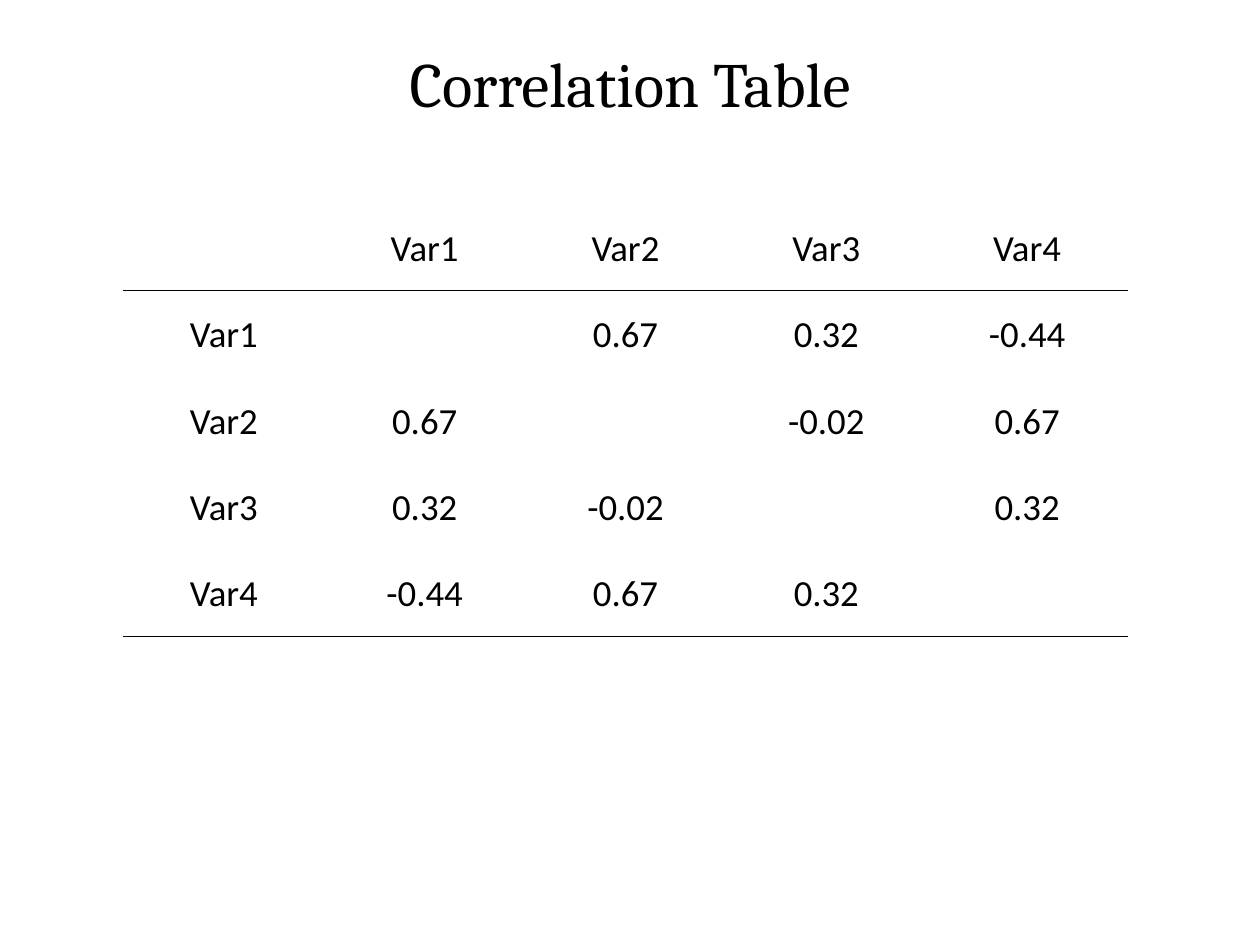
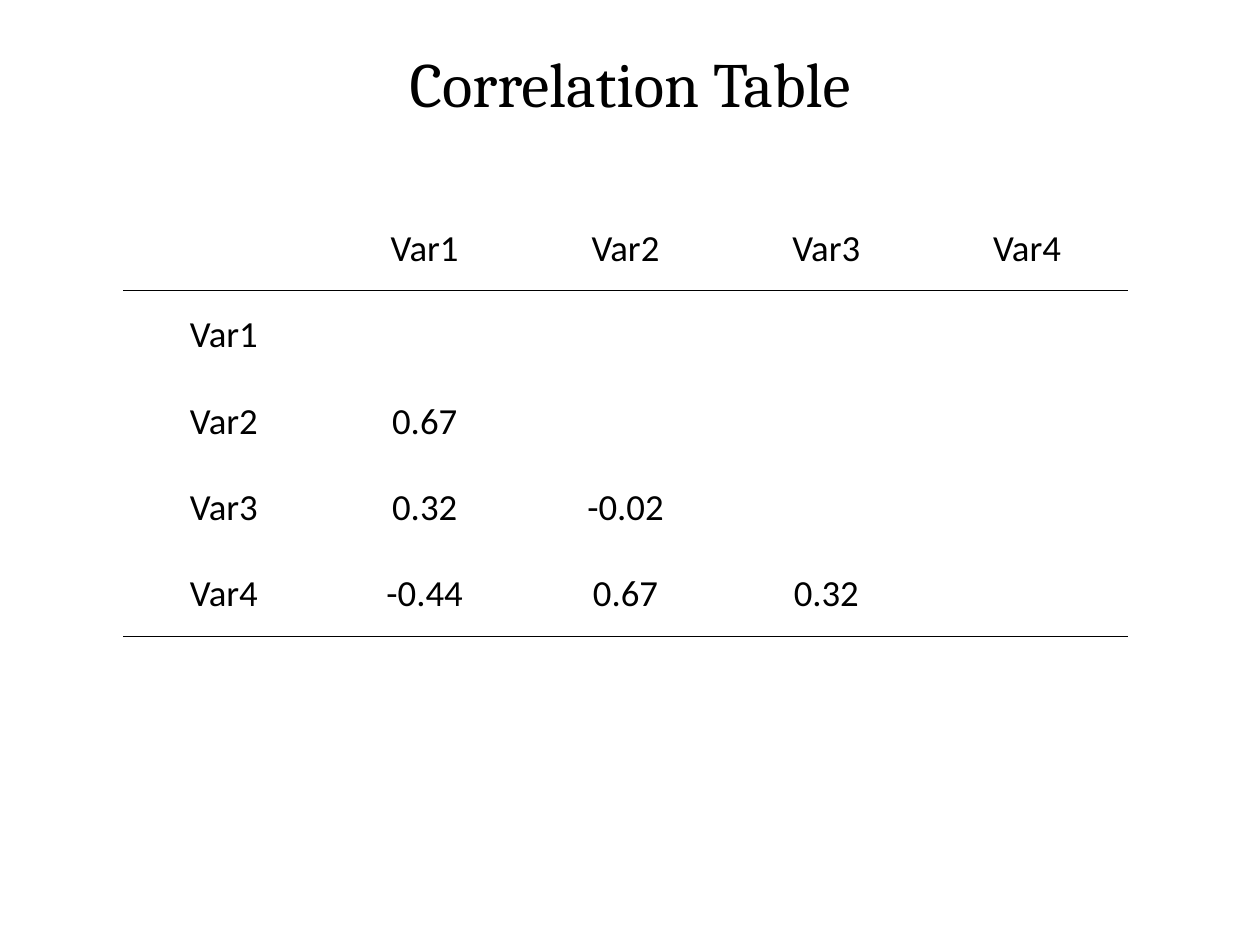
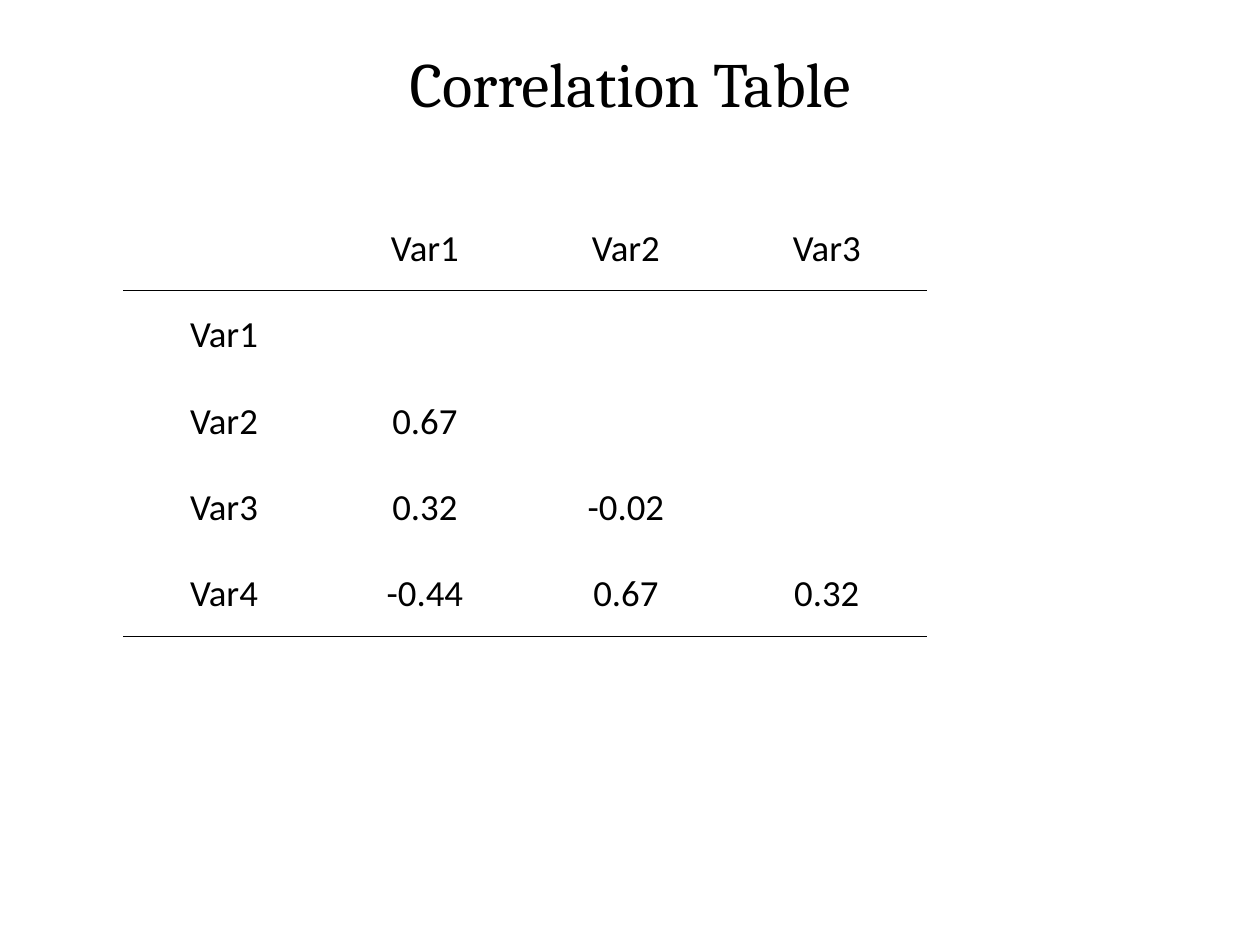
from pptx import Presentation
from pptx.dml.color import RGBColor
from pptx.enum.text import MSO_ANCHOR, PP_ALIGN
from pptx.oxml.ns import qn
from pptx.util import Inches, Pt
from lxml import etree

CENTER = PP_ALIGN.CENTER
TOP, MIDDLE = MSO_ANCHOR.TOP, MSO_ANCHOR.MIDDLE
TITLE_ONLY = 5

COLORS = {"text": "000000", "rule": "000000", "background": "FFFFFF"}
TITLE_FONT, BODY_FONT = "Cambria", "Calibri"
RULE_WIDTH = Pt(0.5)

TITLE_BOX = (0.5, 0.3, 9, 1.25)
FULL_BOX = (0.98, 1.62, 7.97, 3.43)
REDUCED_BOX = (0.98, 1.62, 6.38, 3.43)

VARIABLES = ["Var1", "Var2", "Var3", "Var4"]
# Correlation of each variable with the ones before it
LOWER_TRIANGLE = [
    [],
    ["0.67"],
    ["0.32", "-0.02"],
    ["-0.44", "0.67", "0.32"],
]


def correlation_grid(column_count, mirrored):
    """Return the labelled rows; mirrored fills the upper triangle too."""
    def coefficient(row, column):
        if column < row:
            return LOWER_TRIANGLE[row][column]
        if mirrored and column > row:
            return LOWER_TRIANGLE[column][row]
        return ""

    header = [""] + VARIABLES[:column_count]
    body = [[label] + [coefficient(row, column) for column in range(column_count)]
            for row, label in enumerate(VARIABLES)]
    return [header] + body


def style_text(paragraph, font_name, size):
    paragraph.alignment = CENTER
    paragraph.font.name = font_name
    paragraph.font.size = Pt(size)
    paragraph.font.color.rgb = RGBColor.from_string(COLORS["text"])


def set_borders(cell, ruled_sides):
    """Draw a rule on the ruled sides (L, R, T, B) and clear the others."""
    properties = cell._tc.get_or_add_tcPr()
    for position, side in enumerate("LRTB"):
        border = etree.Element(qn(f"a:ln{side}"), w=str(RULE_WIDTH))
        if side in ruled_sides:
            fill = etree.SubElement(border, qn("a:solidFill"))
            etree.SubElement(fill, qn("a:srgbClr"), val=COLORS["rule"])
        else:
            etree.SubElement(border, qn("a:noFill"))
        properties.insert(position, border)


def format_cell(cell, content, ruled_sides):
    cell.fill.solid()
    cell.fill.fore_color.rgb = RGBColor.from_string(COLORS["background"])
    cell.vertical_anchor = MIDDLE
    cell.margin_left = cell.margin_right = cell.margin_top = Inches(0.02)
    cell.margin_bottom = 0
    cell.text = content
    style_text(cell.text_frame.paragraphs[0], BODY_FONT, 21)
    set_borders(cell, ruled_sides)


def add_correlation_table(slide, box, grid):
    left, top, width, height = box
    table = slide.shapes.add_table(
        len(grid), len(grid[0]), Inches(left), Inches(top),
        Inches(width), Inches(height)).table
    table.first_row = table.horz_banding = False
    for column in table.columns:
        column.width = Inches(width / len(grid[0]))
    for row in table.rows:
        row.height = Inches(height / len(grid))
    rules = {0: "B", 1: "T", len(grid) - 1: "B"}
    for row, contents in enumerate(grid):
        for column, content in enumerate(contents):
            format_cell(table.cell(row, column), content, rules.get(row, ""))


def set_title(slide, box, heading):
    title = slide.shapes.title
    title.left, title.top, title.width, title.height = map(Inches, box)
    title.text_frame.text = heading
    title.text_frame.vertical_anchor = TOP
    style_text(title.text_frame.paragraphs[0], TITLE_FONT, 36)


def add_correlation_slide(prs, table_box, grid):
    slide = prs.slides.add_slide(prs.slide_layouts[TITLE_ONLY])
    slide.background.fill.solid()
    slide.background.fill.fore_color.rgb = RGBColor.from_string(COLORS["background"])
    add_correlation_table(slide, table_box, grid)
    set_title(slide, TITLE_BOX, "Correlation Table")


def main():
    prs = Presentation()
    prs.slide_width, prs.slide_height = Inches(10), Inches(7.5)
    add_correlation_slide(prs, FULL_BOX, correlation_grid(4, mirrored=True))
    add_correlation_slide(prs, FULL_BOX, correlation_grid(4, mirrored=False))
    add_correlation_slide(prs, REDUCED_BOX, correlation_grid(3, mirrored=False))
    prs.save("out.pptx")


if __name__ == "__main__":
    main()
